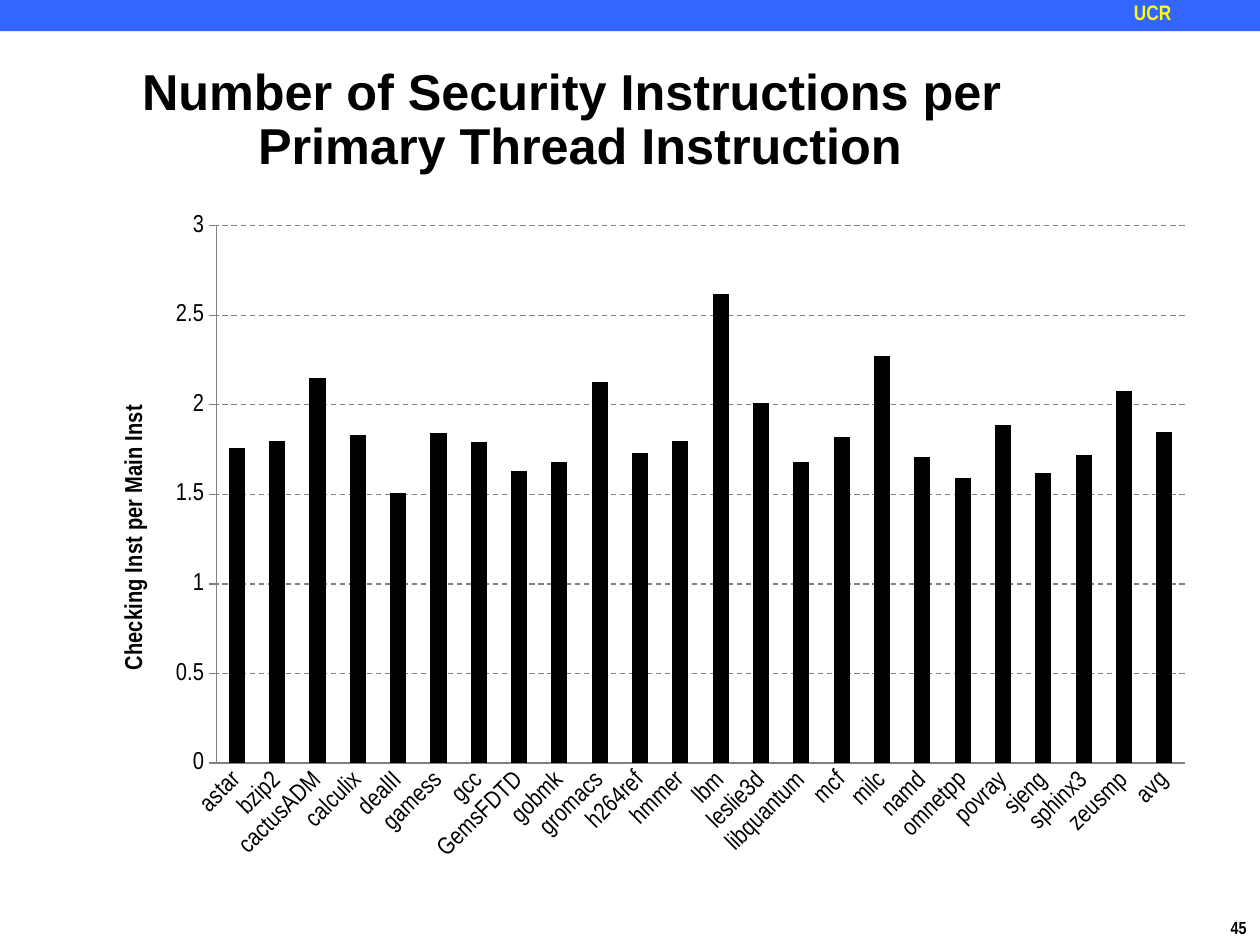
from lxml import etree
from pptx import Presentation
from pptx.chart.data import CategoryChartData as Data
from pptx.dml.color import RGBColor as RGB
from pptx.enum.chart import XL_CHART_TYPE as Kind, XL_TICK_MARK as Tick
from pptx.enum.dml import MSO_LINE_DASH_STYLE as Dash
from pptx.enum.shapes import MSO_SHAPE as Shape
from pptx.enum.text import MSO_ANCHOR as Anchor, MSO_AUTO_SIZE as Fit, PP_ALIGN as Align
from pptx.oxml import parse_xml
from pptx.oxml.ns import nsdecls, qn
from pptx.util import Cm, Pt

theme = {
    "ink": RGB(0, 0, 0), "bar": RGB(0x33, 0x66, 0xFF),
    "tag": RGB(0xFF, 0xFF, 0), "rule": RGB(0x80, 0x80, 0x80),
    "head": "Arial", "body": "Arial Narrow",
    "title": Pt(28.8), "axis": Pt(14), "mark": Pt(12), "small": Pt(10),
}


def style(font, name, size, color="ink", bold=True):
    for key, val in {"name": theme[name], "size": theme[size], "bold": bold}.items():
        setattr(font, key, val)
    font.color.rgb = theme[color]


def layout(x, y, w=None, h=None):
    root = parse_xml(f"<c:layout {nsdecls('c')}><c:manualLayout/></c:layout>")
    inner = w is not None
    vals = {"layoutTarget": "inner" if inner else None, "xMode": "edge",
            "yMode": "edge", "x": x, "y": y, "w": w, "h": h}
    for tag, val in vals.items():
        if val is not None:
            etree.SubElement(root[0], qn("c:" + tag)).set("val", str(val))
    return root


deck = Presentation()
deck.slide_width, deck.slide_height = Cm(25.4), Cm(19.05)
slide = deck.slides.add_slide(deck.slide_layouts[5])
shapes = slide.shapes

band = shapes.add_shape(Shape.RECTANGLE, 0, 0, Cm(25.4), Cm(0.63))
band.shadow.inherit = False
band.fill.solid()
band.fill.fore_color.rgb = theme["bar"]
band.line.fill.background()

labels = [
    ("UCR", (22.86, 0, 2.54, 0.56), "mark", "tag", 0, True),
    ("45", (24.56, 18.36, 0.86, 0.69), "small", "ink", 0.25, False),
]
for text, box, size, color, pad, wrap in labels:
    frame = shapes.add_textbox(*map(Cm, box)).text_frame
    vals = {"text": text, "word_wrap": wrap, "margin_left": Cm(pad),
            "margin_right": Cm(pad), "margin_top": Cm(pad / 2),
            "margin_bottom": Cm(pad / 2)}
    for key, val in vals.items():
        setattr(frame, key, val)
    style(frame.paragraphs[0].runs[0].font, "body", size, color)

title = shapes.title
box = {"left": 0.99, "top": 1.22, "width": 21.08, "height": 2.11}
for key, val in box.items():
    setattr(title, key, Cm(val))
frame = title.text_frame
vals = {"text": "Number of Security Instructions per Primary Thread Instruction",
        "word_wrap": True, "auto_size": Fit.NONE, "vertical_anchor": Anchor.TOP}
for key, val in vals.items():
    setattr(frame, key, val)
para = frame.paragraphs[0]
para.alignment, para.line_spacing = Align.CENTER, 0.9
props = para._p.get_or_add_pPr()
props.set("marL", str(Cm(0.33)))
props.set("indent", str(-Cm(0.33)))
style(para.runs[0].font, "head", "title")

rates = {
    "astar": 1.76, "bzip2": 1.8, "cactusADM": 2.15, "calculix": 1.83,
    "dealII": 1.51, "gamess": 1.84, "gcc": 1.79, "GemsFDTD": 1.63,
    "gobmk": 1.68, "gromacs": 2.13, "h264ref": 1.73, "hmmer": 1.8,
    "lbm": 2.62, "leslie3d": 2.01, "libquantum": 1.68, "mcf": 1.82,
    "milc": 2.27, "namd": 1.71, "omnetpp": 1.59, "povray": 1.89,
    "sjeng": 1.62, "sphinx3": 1.72, "zeusmp": 2.08, "avg": 1.85,
}
data = Data()
data.categories = list(rates)
data.add_series("Series 1", list(rates.values()))
place = map(Cm, (1.9, 4.01, 22.43, 13.54))
chart = shapes.add_chart(Kind.COLUMN_CLUSTERED, *place, data).chart
chart.has_legend = chart.has_title = False
style(chart.font, "body", "small", bold=False)

plot = chart.plots[0]
plot.gap_width, plot.vary_by_categories = 150, False
fill = plot.series[0].format.fill
fill.solid()
fill.fore_color.rgb = theme["ink"]

cats, rate = chart.category_axis, chart.value_axis
for axis, mark in ((cats, Tick.NONE), (rate, Tick.OUTSIDE)):
    axis.major_tick_mark, axis.minor_tick_mark = mark, Tick.NONE
    style(axis.tick_labels.font, "body", "axis", bold=False)
    axis.format.line.color.rgb = theme["rule"]
cats._element.find(qn("c:txPr")).find(qn("a:bodyPr")).set("rot", "-2700000")

scale = {"minimum_scale": 0, "maximum_scale": 3, "major_unit": 0.5,
         "has_major_gridlines": True}
for key, val in scale.items():
    setattr(rate, key, val)
rate.tick_labels.number_format = "General"
rate.tick_labels.number_format_is_linked = False
grid = rate.major_gridlines.format.line
grid.color.rgb = theme["rule"]
grid.width, grid.dash_style = Pt(0.75), Dash.DASH

name = rate.axis_title
name.text_frame.text = "Checking Inst per Main Inst"
style(name.text_frame.paragraphs[0].runs[0].font, "body", "axis")
body = name._element.find(".//" + qn("a:bodyPr"))
body.set("rot", "-5400000")
body.set("vert", "horz")

area = chart._chartSpace.find(".//" + qn("c:plotArea"))
spots = ((area, 0, layout(0.11, 0.04, 0.87, 0.8)),
         (name._element, 1, layout(0.02, 0.3)))
for node, spot, form in spots:
    for old in node.findall(qn("c:layout")):
        node.remove(old)
    node.insert(spot, form)

deck.save("out.pptx")
